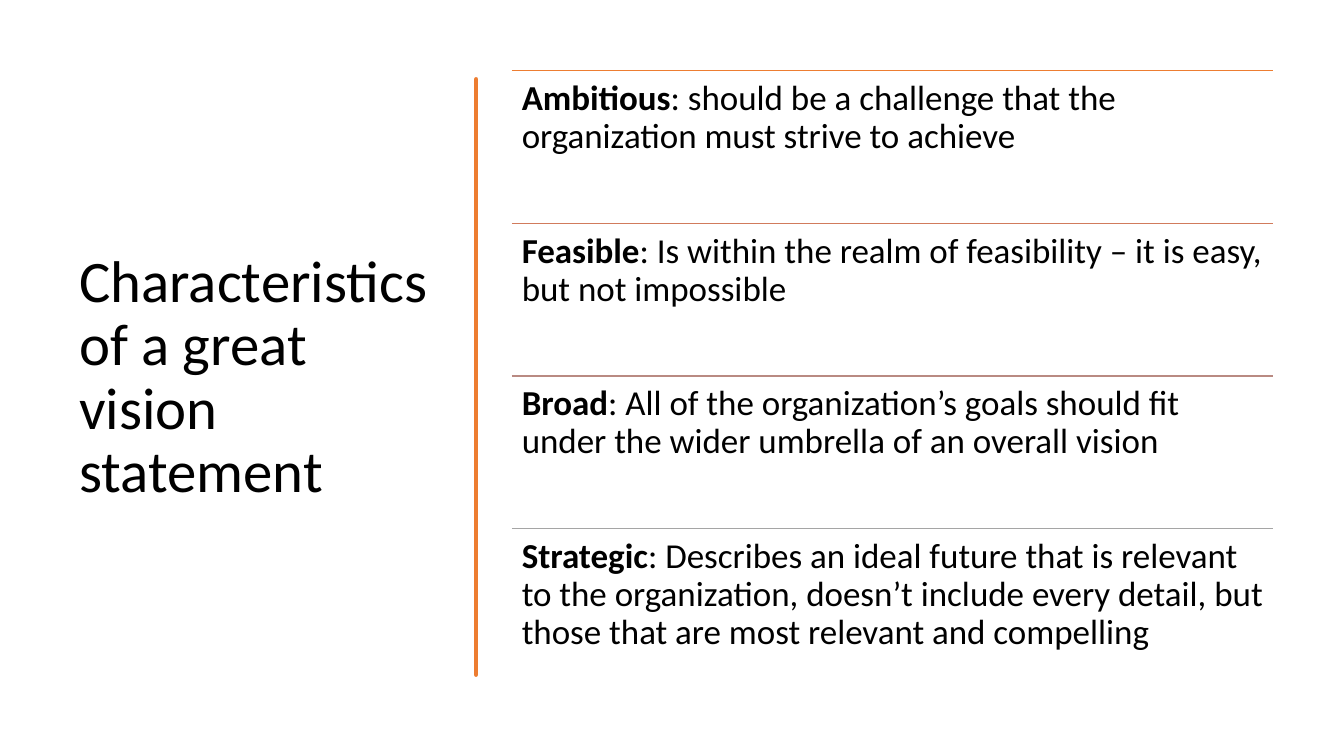
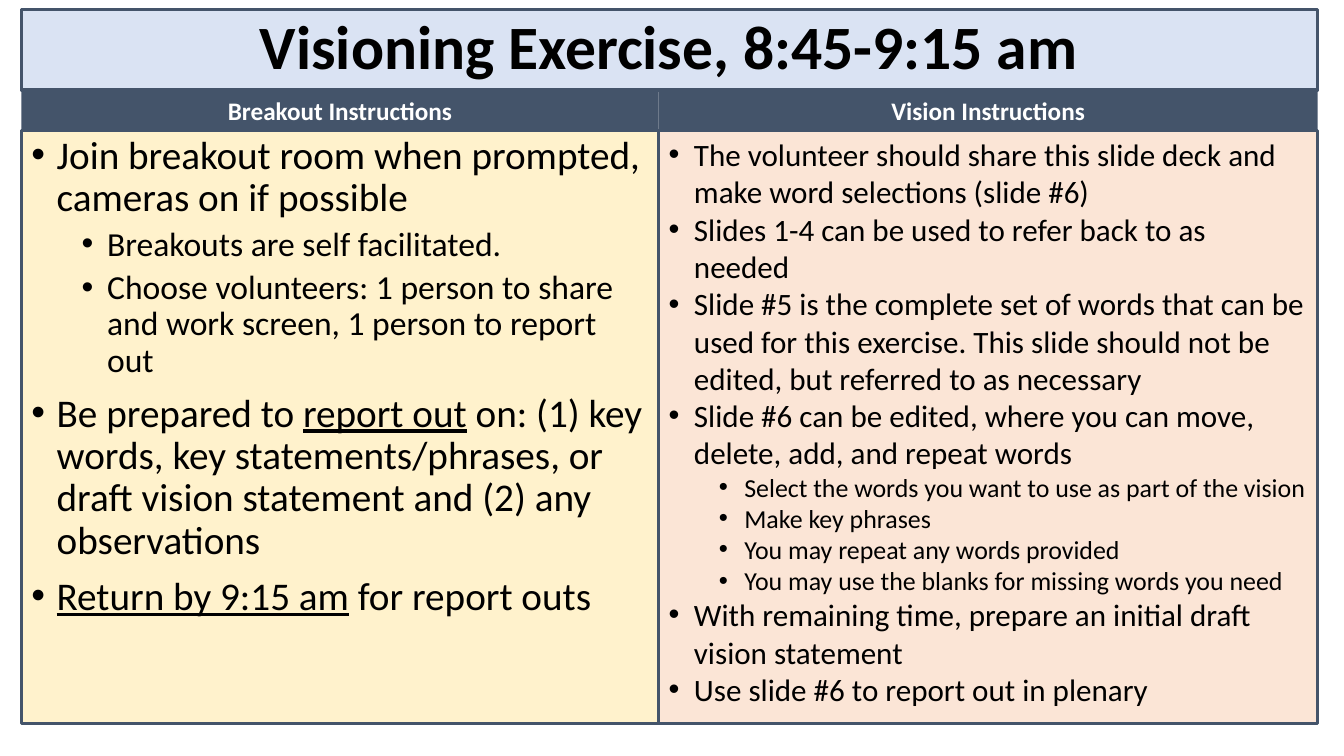
from pptx import Presentation
from pptx import util as u
from pptx.dml.color import RGBColor
from pptx.enum import shapes, text
from pptx.oxml.ns import qn
from lxml import etree

Cm, Pt = u.Cm, u.Pt
FONT = "Calibri"
BLACK = RGBColor(0x00, 0x00, 0x00)
WHITE = RGBColor(0xFF, 0xFF, 0xFF)
SLATE = RGBColor(0x44, 0x54, 0x6A)
ORANGE = RGBColor(0xED, 0x7D, 0x31)
RUST = RGBColor(0xD1, 0x7B, 0x5C)
ROSE = RGBColor(0xB9, 0x8A, 0x82)
GRAY = RGBColor(0xA5, 0xA5, 0xA5)
BLUE = RGBColor(0xDA, 0xE3, 0xF3)
CREAM = RGBColor(0xFF, 0xF2, 0xCC)
PEACH = RGBColor(0xFB, 0xE5, 0xD6)

# Each trait: rule colour, name, meaning
TRAITS = [
    (ORANGE, "Ambitious", ": should be a challenge that the organization must strive to achieve"),
    (RUST, "Feasible", ": Is within the realm of feasibility – it is easy, but not impossible"),
    (ROSE, "Broad", ": All of the organization’s goals should fit under the wider umbrella of an overall vision"),
    (GRAY, "Strategic", ": Describes an ideal future that is relevant to the organization, doesn’t include "
                        "every detail, but those that are most relevant and compelling"),
]

# Each item: level, then runs; a run in a tuple is underlined
BREAKOUT = [
    (0, "Join breakout room when prompted, cameras on if possible"),
    (1, "Breakouts are self facilitated."),
    (1, "Choose volunteers: 1 person to share and work screen, 1 person to report out"),
    (0, "Be prepared to ", ("report out",),
     " on: (1) key words, key statements/phrases, or draft vision statement and (2) any observations"),
    (0, ("Return by 9:15 am",), " for report outs"),
]
VISION = [
    (0, "The volunteer should share this slide deck and make word selections (slide #6)"),
    (0, "Slides 1-4 can be used to refer back to as needed"),
    (0, "Slide #5 is the complete set of words that can be used for this exercise. "
        "This slide should not be edited, but referred to as necessary"),
    (0, "Slide #6 can be edited, where you can move, delete, add, and repeat words"),
    (1, "Select the words you want to use as part of the vision"),
    (1, "Make key phrases"),
    (1, "You may repeat any words provided"),
    (1, "You may use the blanks for missing words you need"),
    (0, "With remaining time, prepare an initial draft vision statement"),
    (0, "Use slide #6 to report out in plenary"),
]


def style(para, size, color=BLACK, bold=None, align=text.PP_ALIGN.LEFT, lead=None):
    font = para.font
    font.name, font.size, font.bold = FONT, Pt(size), bold
    font.color.rgb = color
    para.alignment = align
    para.line_spacing = lead


def label(slide, x, y, w, h, pad=0.13):
    """Add a wrapped text box and return its frame."""
    frame = slide.shapes.add_textbox(Cm(x), Cm(y), Cm(w), Cm(h)).text_frame
    frame.word_wrap = True
    frame.margin_top = frame.margin_bottom = Cm(pad)
    return frame


def panel(slide, x, y, w, h, fill, edge=SLATE):
    """Add a filled rectangle and return its frame."""
    box = slide.shapes.add_shape(shapes.MSO_SHAPE.RECTANGLE, Cm(x), Cm(y), Cm(w), Cm(h))
    box.shadow.inherit = False
    box.fill.solid()
    box.fill.fore_color.rgb = fill
    if edge is None:
        box.line.fill.background()
    else:
        box.line.color.rgb = edge
        box.line.width = Pt(2.25)
    frame = box.text_frame
    frame.word_wrap = True
    frame.vertical_anchor = text.MSO_ANCHOR.TOP
    return frame


def rule(slide, x, y, w, color):
    line = slide.shapes.add_connector(shapes.MSO_CONNECTOR.STRAIGHT, Cm(x), Cm(y), Cm(x + w), Cm(y))
    line.line.color.rgb = color
    line.line.width = Pt(1)
    etree.SubElement(line._element.spPr, qn("a:effectLst"))


def stroke(slide, x, y, h):
    """Draw a slightly wavy upright bar, centred on x."""
    right = [0.03, 0.06, 0.03, 0.04, 0.02, 0.04, 0.06, 0.04, 0.05, 0.02, 0.06, 0.04, 0.03]
    left = [-0.02, -0.01, -0.06, -0.02, -0.01, -0.03, -0.05, -0.02, -0.05, -0.02, 0, -0.04, -0.02]
    step = h / (len(right) - 1)
    pts = [(x + d, y + i * step) for i, d in enumerate(right)]
    pts += [(x + d, y + i * step) for i, d in reversed(list(enumerate(left)))]
    pen = slide.shapes.build_freeform(*pts[0], scale=Cm(1))
    pen.add_line_segments(pts[1:], close=True)
    bar = pen.convert_to_shape()
    bar.shadow.inherit = False
    bar.fill.solid()
    bar.fill.fore_color.rgb = ORANGE
    bar.line.color.rgb = ORANGE
    bar.line.width = Pt(3.25)


def traits(slide, x, y, w, h):
    """Stack the traits in equal rows, each under a rule."""
    row = h / len(TRAITS)
    for i, (color, name, note) in enumerate(TRAITS):
        top = y + i * row
        rule(slide, x, top, w, color)
        para = label(slide, x, top, w, row, pad=0.25).paragraphs[0]
        style(para, 25, lead=0.9)
        para.add_run().text = name
        para.runs[0].font.bold = True
        para.add_run().text = note


def bullets(frame, items, sizes, lead=None, gaps=(0, 0)):
    """Fill a frame with items on two levels."""
    for i, (level, *parts) in enumerate(items):
        para = frame.paragraphs[0] if i == 0 else frame.add_paragraph()
        para.level = level
        style(para, sizes[level], lead=lead)
        para.space_before = Pt(gaps[level])
        for part in parts:
            run = para.add_run()
            if isinstance(part, tuple):
                run.text = part[0]
                run.font.underline = True
            else:
                run.text = part
        props = para._p.get_or_add_pPr()
        props.set("marL", str(Cm(0.64 + 1.27 * level)))
        props.set("indent", str(-Cm(0.64)))
        etree.SubElement(props, qn("a:buFont")).set("typeface", "Arial")
        mark = etree.SubElement(props, qn("a:buChar"))
        mark.set("char", "•")
        # Bullets come before the default run properties
        props.append(props.find(qn("a:defRPr")))


def column(slide, x, y, w, h, head, fill):
    """Add a headed column and return the frame of its body."""
    bar = 1.02
    body = panel(slide, x, y + bar, w, h - bar, fill)
    para = panel(slide, x, y, w, bar, SLATE, None).paragraphs[0]
    para.text = head
    style(para, 18, WHITE, True, text.PP_ALIGN.CENTER)
    return body


def great(slide):
    frame = label(slide, 1.75, 1.78, 9.5, 15.52)
    frame.vertical_anchor = text.MSO_ANCHOR.MIDDLE
    para = frame.paragraphs[0]
    para.text = "Characteristics of a great vision statement"
    style(para, 42, lead=0.9)
    stroke(slide, 12.03, 2.13, 15.04)
    traits(slide, 12.9, 1.78, 19.18, 15.38)


def drill(slide):
    x, y, w, h = 0.54, 0.23, 32.67, 2.04
    frame = panel(slide, x, y, w, h, BLUE)
    frame.vertical_anchor = text.MSO_ANCHOR.MIDDLE
    para = frame.paragraphs[0]
    para.text = "Visioning Exercise, 8:45-9:15 am"
    style(para, 44, bold=True, align=text.PP_ALIGN.CENTER, lead=0.9)
    # Two columns below the title
    top, tall, wide = y + h, 15.96, 16.06
    body = column(slide, x, top, wide, tall, "Breakout Instructions", CREAM)
    bullets(body, BREAKOUT, (28, 24), 0.9, (10, 5))
    body = column(slide, x + wide, top, w - wide, tall, "Vision Instructions", PEACH)
    bullets(body, VISION, (22.2, 18.5))


def main():
    deck = Presentation()
    deck.slide_width, deck.slide_height = Cm(33.87), Cm(19.05)
    for build in (great, drill):
        build(deck.slides.add_slide(deck.slide_layouts[6]))
    deck.save("out.pptx")


if __name__ == "__main__":
    main()
